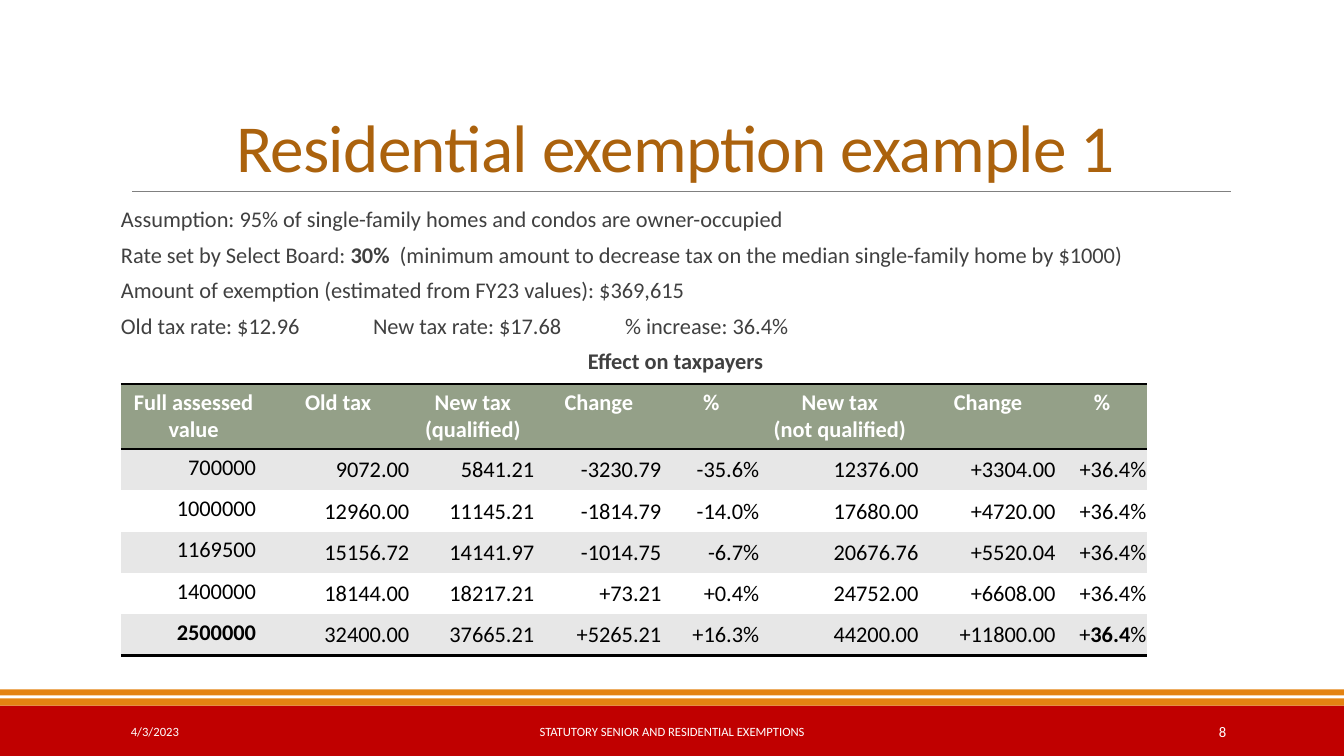
from lxml.etree import SubElement
from pptx import Presentation
from pptx.dml.color import RGBColor
from pptx.enum.shapes import MSO_CONNECTOR, MSO_SHAPE
from pptx.enum.text import MSO_ANCHOR, MSO_AUTO_SIZE, PP_ALIGN
from pptx.oxml import parse_xml
from pptx.oxml.ns import nsdecls, qn
from pptx.util import Inches, Pt

NO_GRID_STYLE = "{2D5ABB26-0587-4C30-8999-92F81FD0307C}"

ASSUMPTIONS = [
    [("Assumption: 95% of single-family homes and condos are owner-occupied", False)],
    [("Rate set by Select Board: ", False), ("30%", True),
     ("  (minimum amount to decrease tax on the median single-family home by $1000)", False)],
    [("Amount of exemption (estimated from FY23 values): $369,615", False)],
    [("Old tax rate: $12.96\t\tNew tax rate: $17.68\t\t% increase: 36.4%", False)],
    [("Effect on taxpayers", True)],
]
RATE_TAB_STOPS = [2, 3, 5, 6]

TAX_HEADINGS = ["Full assessed value", "Old tax", "New tax\n(qualified)", "Change", "%",
                "New tax\n(not qualified)", "Change", "%"]
TAX_COLUMN_WIDTHS = [1.44, 1.43, 1.24, 1.26, 0.97, 1.58, 1.36, 0.9]
TAX_ROWS = [
    ["700000", "9072.00", "5841.21", "-3230.79", "-35.6%", "12376.00", "+3304.00", "+36.4%"],
    ["1000000", "12960.00", "11145.21", "-1814.79", "-14.0%", "17680.00", "+4720.00", "+36.4%"],
    ["1169500", "15156.72", "14141.97", "-1014.75", "-6.7%", "20676.76", "+5520.04", "+36.4%"],
    ["1400000", "18144.00", "18217.21", "+73.21", "+0.4%", "24752.00", "+6608.00", "+36.4%"],
    [[("2500000", True)], "32400.00", "37665.21", "+5265.21", "+16.3%", "44200.00",
     "+11800.00", [("+", False), ("36.4", True), ("%", False)]],
]


def rgb(value):
    return RGBColor.from_string(value)


def apply(target, values):
    for name, value in values.items():
        setattr(target, name, value)


class ExemptionSlide:
    font = "Calibri"
    body_size = 16
    body_spacing = {"line_spacing": 0.9, "space_before": Pt(6), "space_after": Pt(2)}
    body_frame = {"margin_left": 0, "margin_right": 0, "word_wrap": True,
                  "auto_size": MSO_AUTO_SIZE.NONE, "vertical_anchor": MSO_ANCHOR.TOP}
    title_frame = {"word_wrap": True, "auto_size": MSO_AUTO_SIZE.NONE,
                   "vertical_anchor": MSO_ANCHOR.BOTTOM}
    footer_frame = {"word_wrap": True, "vertical_anchor": MSO_ANCHOR.MIDDLE}
    amount_cell = {"margin_left": Inches(0.01), "margin_right": Inches(0.01),
                   "margin_top": Inches(0.01), "margin_bottom": 0,
                   "vertical_anchor": MSO_ANCHOR.MIDDLE}

    def __init__(self, deck):
        self.slide = deck.slides.add_slide(deck.slide_layouts[1])

    def place(self, shape, left, top, width, height):
        apply(shape, {"left": Inches(left), "top": Inches(top),
                      "width": Inches(width), "height": Inches(height)})

    def add_runs(self, paragraph, runs, size, color, align=PP_ALIGN.LEFT):
        """Fill a paragraph with (text, bold) runs."""
        paragraph.alignment = align
        for text, bold in runs:
            run = paragraph.add_run()
            run.text = text
            apply(run.font, {"name": self.font, "size": Pt(size), "bold": bold})
            run.font.color.rgb = rgb(color)

    def bar(self, top, height, color):
        band = self.slide.shapes.add_shape(MSO_SHAPE.RECTANGLE, 0, Inches(top),
                                           Inches(13.33), Inches(height))
        band.shadow.inherit = False
        band.fill.solid()
        band.fill.fore_color.rgb = rgb(color)
        band.line.fill.background()

    def rule(self, left, right, y, color):
        divider = self.slide.shapes.add_connector(
            MSO_CONNECTOR.STRAIGHT, Inches(left), Inches(y), Inches(right), Inches(y))
        divider.line.color.rgb = rgb(color)
        divider.line.width = Pt(0.5)
        SubElement(divider.element.spPr, qn("a:effectLst"))

    def title(self, text):
        heading = self.slide.shapes.title
        self.place(heading, 1.2, 0.31, 11, 1.59)
        apply(heading.text_frame, self.title_frame)
        paragraph = heading.text_frame.paragraphs[0]
        self.add_runs(paragraph, [(text, False)], 48, "AB620D", PP_ALIGN.CENTER)
        paragraph.line_spacing = 0.85
        paragraph.runs[0].font._element.set("spc", "-50")

    def body(self, lines):
        assumptions = self.slide.placeholders[1]
        self.place(assumptions, 1.2, 2.02, 11, 4.4)
        frame = assumptions.text_frame
        apply(frame, self.body_frame)
        for index, runs in enumerate(lines):
            paragraph = frame.add_paragraph() if index else frame.paragraphs[0]
            is_caption = index == len(lines) - 1
            self.add_runs(paragraph, runs, self.body_size, "404040",
                          PP_ALIGN.CENTER if is_caption else PP_ALIGN.LEFT)
            apply(paragraph, self.body_spacing)
            properties = paragraph._p.get_or_add_pPr()
            properties.set("marL", "0")
            properties.set("indent", "0")
            SubElement(properties, qn("a:buNone"))
            if "\t" in paragraph.text:
                stops = SubElement(properties, qn("a:tabLst"))
                for stop in RATE_TAB_STOPS:
                    SubElement(stops, qn("a:tab"), pos=str(Inches(stop)), algn="l")

    def border(self, cell, sides):
        """Draw 2 pt black edges; sides are tags in schema order."""
        for position, side in enumerate(sides):
            edge = parse_xml(
                f'<a:{side} {nsdecls("a")} w="{Pt(2)}"><a:solidFill>'
                f'<a:srgbClr val="000000"/></a:solidFill></a:{side}>')
            cell._tc.get_or_add_tcPr().insert(position, edge)

    def fill_cell(self, cell, content, fill, color, align, bold=False):
        cell.fill.solid()
        cell.fill.fore_color.rgb = rgb(fill)
        if isinstance(content, str):
            lines = [[(line, bold)] for line in content.split("\n")]
        else:
            lines = [content]
        frame = cell.text_frame
        for index, runs in enumerate(lines):
            paragraph = frame.add_paragraph() if index else frame.paragraphs[0]
            self.add_runs(paragraph, runs, self.body_size, color, align)

    def table(self, headings, rows, widths):
        row_height = 0.41
        holder = self.slide.shapes.add_table(
            len(rows) + 1, len(headings), Inches(1.2), Inches(3.81),
            Inches(sum(widths)), Inches(row_height * (len(rows) + 1)))
        holder.element.find(".//" + qn("a:tableStyleId")).text = NO_GRID_STYLE
        taxes = holder.table
        for column, width in zip(taxes.columns, widths):
            column.width = Inches(width)
        for row in taxes.rows:
            row.height = Inches(row_height)
        for column, heading in enumerate(headings):
            cell = taxes.cell(0, column)
            self.fill_cell(cell, heading, "94A088", "FFFFFF", PP_ALIGN.CENTER, True)
            self.border(cell, ["lnT", "lnB"])
        for number, amounts in enumerate(rows, 1):
            for column, amount in enumerate(amounts):
                cell = taxes.cell(number, column)
                self.fill_cell(cell, amount, "E7E7E7" if number % 2 else "FFFFFF",
                               "000000", PP_ALIGN.RIGHT)
                if column:
                    apply(cell, self.amount_cell)
                if number == len(rows):
                    self.border(cell, ["lnB"])

    def footer(self, text, left, width, size, align):
        note = self.slide.shapes.add_textbox(Inches(left), Inches(7.06),
                                             Inches(width), Inches(0.4))
        apply(note.text_frame, self.footer_frame)
        self.add_runs(note.text_frame.paragraphs[0], [(text, False)], size, "FFFFFF", align)


def main():
    deck = Presentation()
    apply(deck, {"slide_width": Inches(13.33), "slide_height": Inches(7.5)})
    page = ExemptionSlide(deck)
    page.bar(7, 0.5, "C00000")
    page.bar(6.93, 0.07, "E48312")
    page.rule(1.31, 12.21, 1.9, "808080")
    page.bar(6.84, 0.06, "E48312")
    page.title("Residential exemption example 1")
    page.body(ASSUMPTIONS)
    page.table(TAX_HEADINGS, TAX_ROWS, TAX_COLUMN_WIDTHS)
    page.footer("4/3/2023", 1.2, 2.7, 9, PP_ALIGN.LEFT)
    page.footer("STATUTORY SENIOR AND RESIDENTIAL EXEMPTIONS", 4.03, 5.27, 9, PP_ALIGN.CENTER)
    page.footer("8", 10.83, 1.43, 10.5, PP_ALIGN.RIGHT)
    deck.save("out.pptx")


if __name__ == "__main__":
    main()
